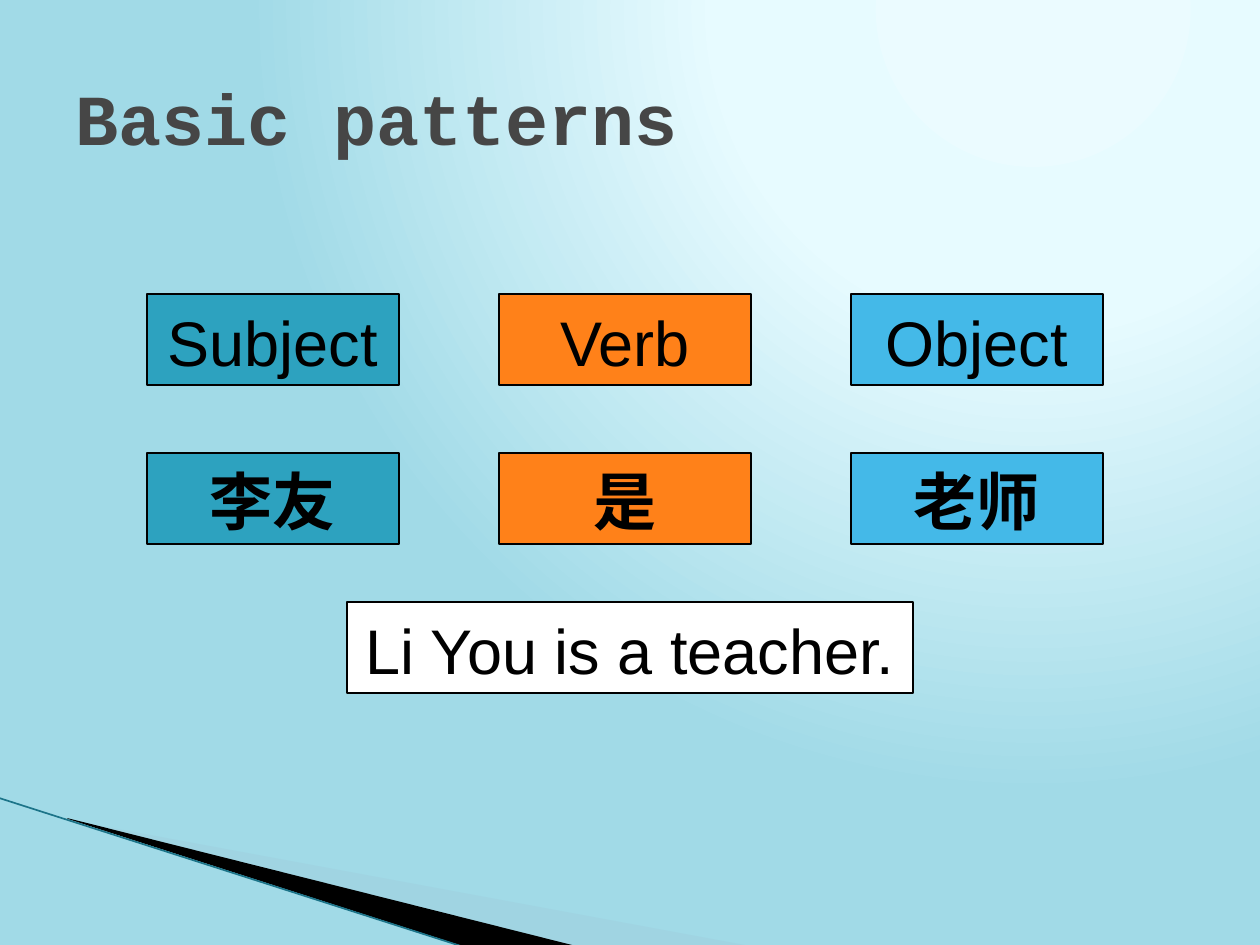
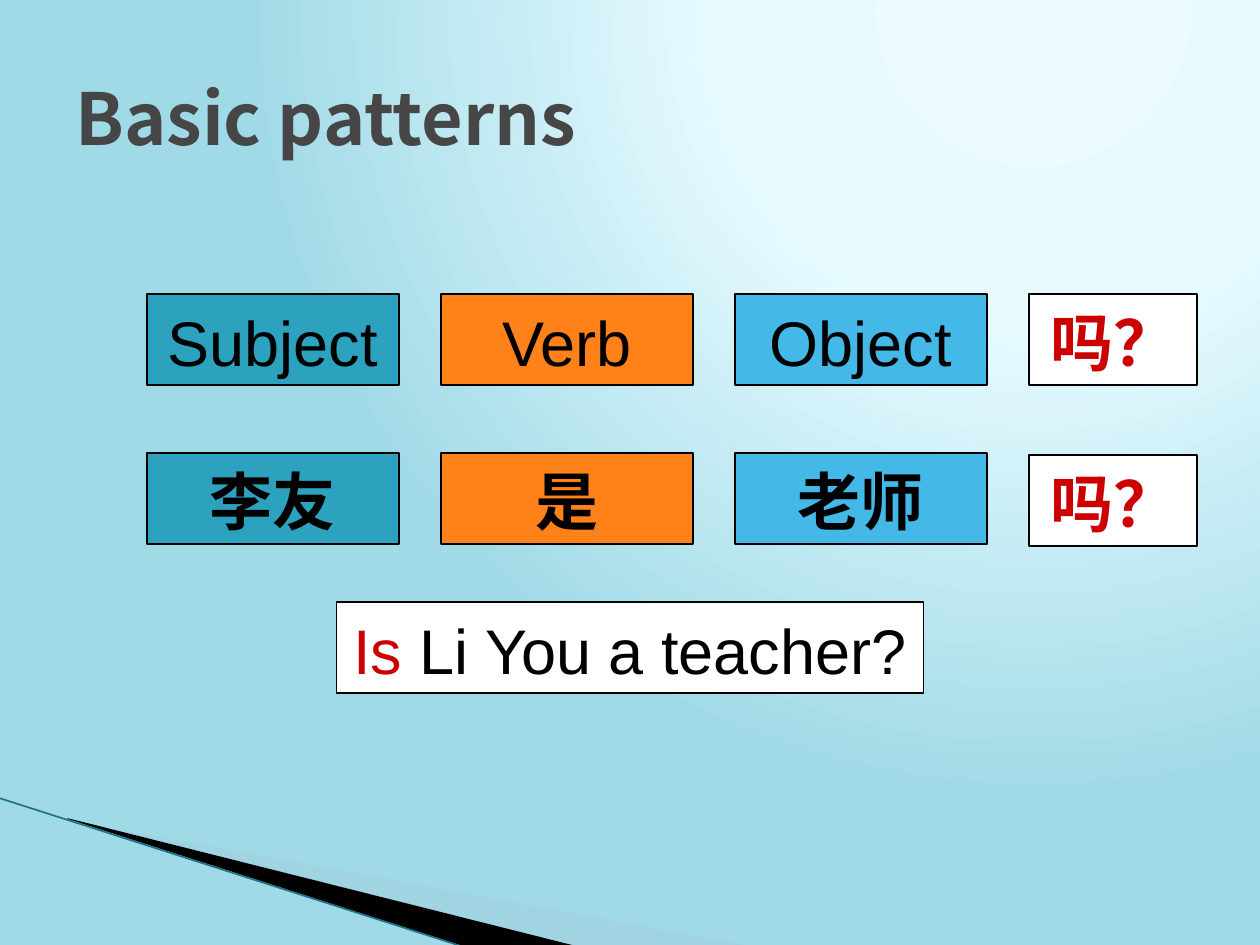
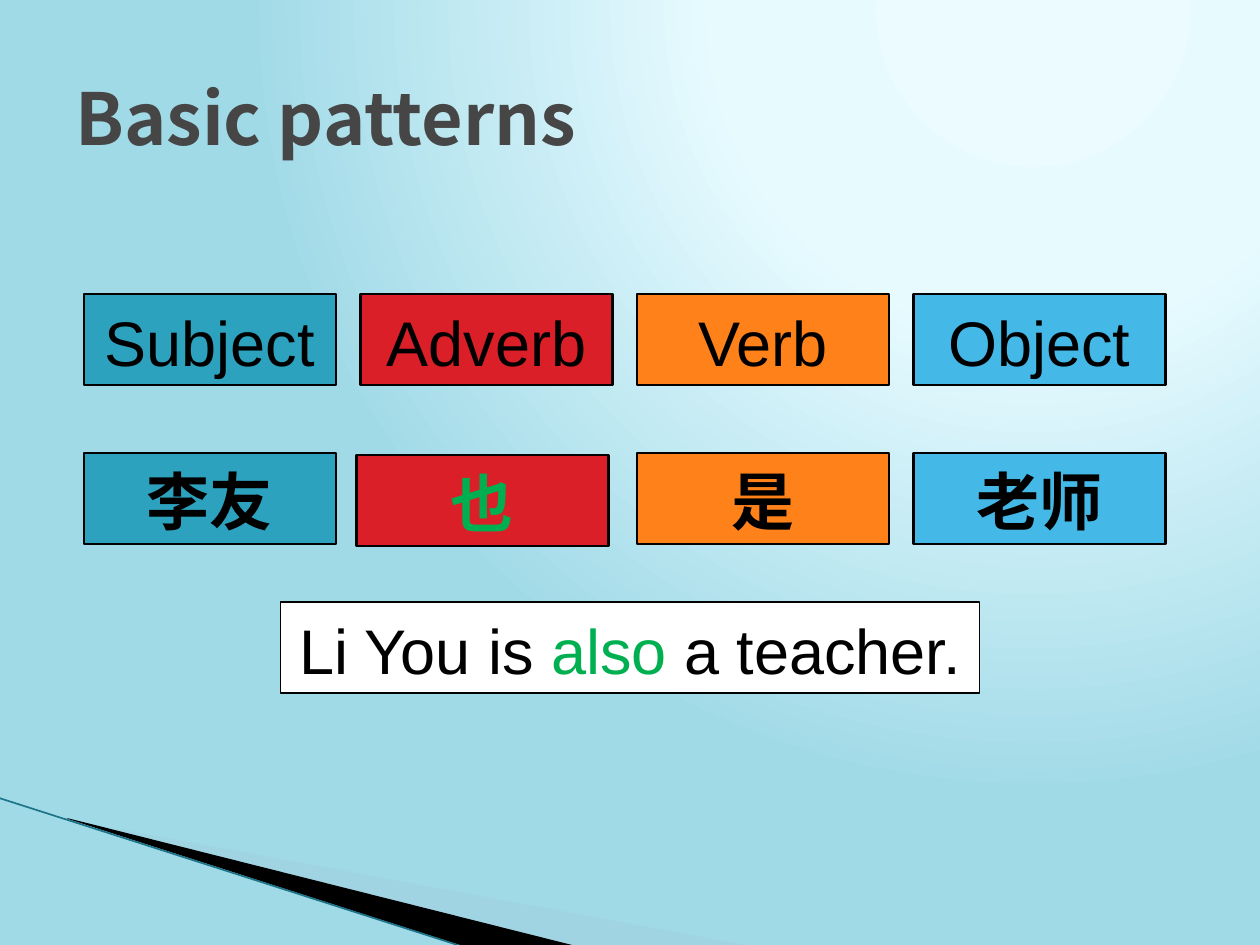
import dataclasses

import pptx
import pptx.dml.color
import pptx.enum.shapes
import pptx.enum.text
import pptx.oxml
import pptx.oxml.ns
import pptx.util

RGBColor = pptx.dml.color.RGBColor
BLACK = RGBColor(0x00, 0x00, 0x00)
WHITE = RGBColor(0xFF, 0xFF, 0xFF)
TITLE_GRAY = RGBColor(0x46, 0x46, 0x46)
TEAL = RGBColor(0x2D, 0xA2, 0xBF)
ORANGE = RGBColor(0xFF, 0x81, 0x19)
SKY = RGBColor(0x44, 0xB9, 0xE8)
RED = RGBColor(0xDA, 0x1F, 0x28)
TEXT_RED = RGBColor(0xCC, 0x00, 0x00)
TEXT_GREEN = RGBColor(0x00, 0xB0, 0x50)
PALE_WEDGE = RGBColor(0xA0, 0xCB, 0xDC)
EDGE_LINE = RGBColor(0x1C, 0x74, 0x89)
BACKGROUND_STOPS = (
    (0, RGBColor(0xEB, 0xFB, 0xFF)),
    (40, RGBColor(0xE7, 0xFB, 0xFF)),
    (100, RGBColor(0xA1, 0xDA, 0xE7)),
)

EMU_PER_PX = 914400 / 126
SLIDE_WIDTH, SLIDE_HEIGHT = 1260, 945
LABEL_TOP, WORD_TOP, SENTENCE_TOP = 294, 453, 602
BOX_WIDTH, BOX_HEIGHT = 252, 91

CJK_FONT = "Noto Sans CJK SC"
LABEL_FORMAT = {"name": "Arial", "size": pptx.util.Pt(36), "bold": False}
WORD_FORMAT = {"name": "Calibri", "size": pptx.util.Pt(36), "bold": True}
TITLE_FORMAT = {"size": pptx.util.Pt(41), "bold": True}


@dataclasses.dataclass
class Part:
    """One part of speech: its label above and an example word below."""
    label: str
    word: str
    fill: RGBColor
    word_color: RGBColor = BLACK
    word_shift: tuple = (0, 0)


SUBJECT = Part("Subject", "李友", TEAL)
VERB = Part("Verb", "是", ORANGE)
OBJECT = Part("Object", "老师", SKY)
ADVERB = Part("Adverb", "也", RED, TEXT_GREEN, (-4, 2))
QUESTION = "吗？"


def px(length):
    return round(length * EMU_PER_PX)


def set_background(master):
    """Give every slide a circular gradient that is brightest at the top right."""
    master.background.fill.gradient()
    gradient = master.element.find(".//" + pptx.oxml.ns.qn("a:gradFill"))
    stops = "".join(
        f'<a:gs pos="{position * 1000}"><a:srgbClr val="{color}"/></a:gs>'
        for position, color in BACKGROUND_STOPS
    )
    gradient.getparent().replace(gradient, pptx.oxml.parse_xml(
        f'<a:gradFill {pptx.oxml.ns.nsdecls("a")} rotWithShape="1">'
        f'<a:gsLst>{stops}</a:gsLst><a:path path="circle">'
        '<a:fillToRect l="65000" t="0" r="0" b="98000"/></a:path></a:gradFill>'
    ))


def add_run(paragraph, text, color, formats):
    run = paragraph.add_run()
    run.text = text
    for name, value in formats.items():
        setattr(run.font, name, value)
    run.font.color.rgb = color
    east_asian = pptx.oxml.parse_xml(
        f'<a:ea {pptx.oxml.ns.nsdecls("a")} typeface="{CJK_FONT}"/>'
    )
    run.font._element.find(pptx.oxml.ns.qn("a:latin")).addnext(east_asian)


def add_wedge(slide, points, color, opacity=100):
    builder = slide.shapes.build_freeform(*points[0], scale=EMU_PER_PX)
    builder.add_line_segments(points[1:])
    wedge = builder.convert_to_shape()
    wedge.shadow.inherit = False
    wedge.line.fill.background()
    wedge.fill.solid()
    wedge.fill.fore_color.rgb = color
    if opacity < 100:
        fill_color = wedge._element.spPr.find(".//" + pptx.oxml.ns.qn("a:srgbClr"))
        fill_color.append(pptx.oxml.parse_xml(
            f'<a:alpha {pptx.oxml.ns.nsdecls("a")} val="{opacity * 1000}"/>'
        ))


def add_corner(slide):
    """Draw the wedges and the thin line at the bottom left."""
    add_wedge(slide, [(69, 820), (750, 946), (575, 946), (69, 819)], PALE_WEDGE, 40)
    add_wedge(slide, [(67, 818), (576, 946), (469, 948), (68, 819)], BLACK)
    edge = slide.shapes.add_connector(
        pptx.enum.shapes.MSO_CONNECTOR.STRAIGHT, px(-1), px(798), px(467), px(948)
    )
    edge.line.color.rgb = EDGE_LINE
    edge.line.width = pptx.util.Pt(0.95)
    edge._element.spPr.append(
        pptx.oxml.parse_xml(f'<a:effectLst {pptx.oxml.ns.nsdecls("a")}/>')
    )


def add_title(slide, text, font_name):
    title = slide.shapes.add_textbox(px(63), px(38), px(1134), px(158))
    title.text_frame.word_wrap = True
    title.text_frame.vertical_anchor = pptx.enum.text.MSO_ANCHOR.MIDDLE
    add_run(title.text_frame.paragraphs[0], text, TITLE_GRAY,
            {"name": font_name, **TITLE_FORMAT})


def add_box(slide, left, top, width, fill, runs, formats, line_width=1.5, wrap=True):
    """Add a bordered box; runs are (text, colour) pairs."""
    box = slide.shapes.add_shape(
        pptx.enum.shapes.MSO_SHAPE.RECTANGLE,
        px(left), px(top), px(width), px(BOX_HEIGHT),
    )
    box.shadow.inherit = False
    box.fill.solid()
    box.fill.fore_color.rgb = fill
    box.line.color.rgb = BLACK
    box.line.width = pptx.util.Pt(line_width)
    box.text_frame.word_wrap = wrap
    box.text_frame.vertical_anchor = pptx.enum.text.MSO_ANCHOR.BOTTOM
    paragraph = box.text_frame.paragraphs[0]
    paragraph.alignment = pptx.enum.text.PP_ALIGN.CENTER
    for text, color in runs:
        add_run(paragraph, text, color, formats)


def add_parts(slide, parts, left, pitch):
    """Set the parts side by side, each label above its word."""
    for index, part in enumerate(parts):
        column = left + index * pitch
        shift_x, shift_y = part.word_shift
        add_box(slide, column, LABEL_TOP, BOX_WIDTH, part.fill,
                [(part.label, BLACK)], LABEL_FORMAT)
        add_box(slide, column + shift_x, WORD_TOP + shift_y, BOX_WIDTH, part.fill,
                [(part.word, part.word_color)], WORD_FORMAT)


def add_question_particles(slide, left):
    for top in (LABEL_TOP, WORD_TOP + 2):
        add_box(slide, left, top, 168, WHITE, [(QUESTION, TEXT_RED)], WORD_FORMAT)


def add_sentence(slide, width, runs):
    add_box(slide, (SLIDE_WIDTH - width) / 2, SENTENCE_TOP, width, WHITE, runs,
            LABEL_FORMAT, line_width=1, wrap=False)


def add_pattern_slide(presentation, title_font, parts, left, pitch,
                      sentence_width, sentence):
    slide = presentation.slides.add_slide(presentation.slide_layouts[6])
    add_corner(slide)
    add_title(slide, "Basic patterns", title_font)
    add_parts(slide, parts, left, pitch)
    add_sentence(slide, sentence_width, sentence)
    return slide


def main():
    presentation = pptx.Presentation()
    presentation.slide_width = px(SLIDE_WIDTH)
    presentation.slide_height = px(SLIDE_HEIGHT)
    set_background(presentation.slide_master)

    add_pattern_slide(
        presentation, "Courier New", [SUBJECT, VERB, OBJECT], 147, 352,
        566, [("Li You is a teacher.", BLACK)],
    )
    question_slide = add_pattern_slide(
        presentation, CJK_FONT, [SUBJECT, VERB, OBJECT], 147, 294,
        587, [("Is", TEXT_RED), (" Li You a teacher?", BLACK)],
    )
    add_question_particles(question_slide, 1029)
    add_pattern_slide(
        presentation, CJK_FONT, [SUBJECT, ADVERB, VERB, OBJECT], 84, 276.5,
        699, [("Li You is ", BLACK), ("also ", TEXT_GREEN), ("a teacher.", BLACK)],
    )
    presentation.save("out.pptx")


if __name__ == "__main__":
    main()
